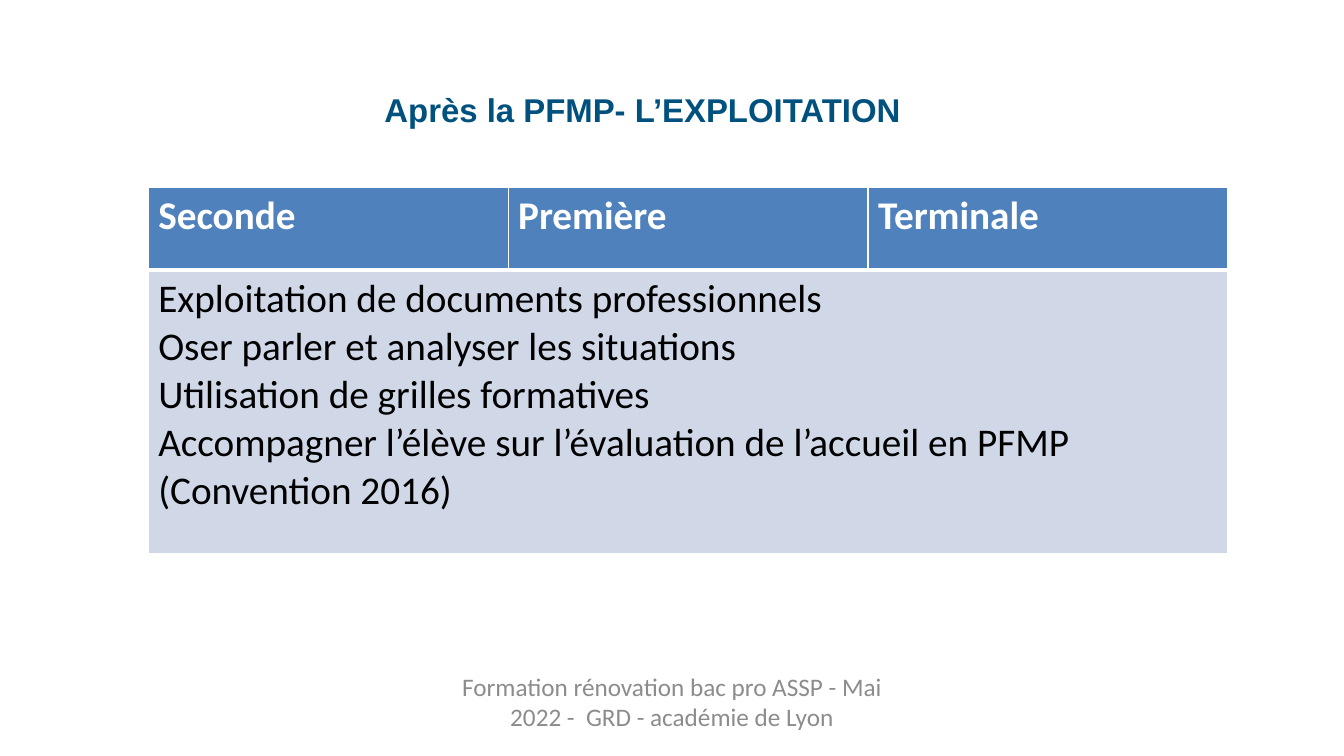
from lxml import etree
from pptx import Presentation
from pptx.dml.color import RGBColor
from pptx.enum import text
from pptx.oxml import ns
from pptx.util import Inches, Pt

HEADERS = ["Seconde", "Première", "Terminale"]
ACTIVITIES = [
    "Exploitation de documents professionnels",
    "Oser parler et analyser les situations",
    "Utilisation de grilles formatives",
    "Accompagner l’élève sur l’évaluation de l’accueil en PFMP (Convention 2016)",
]


def rgb(value):
    return RGBColor.from_string(value)


class SlideBuilder:
    blue, pale, navy, grey = "4F81BD", "D0D8E8", "00517D", "8C8C8C"
    white, black = "FFFFFF", "000000"

    def __init__(self, prs):
        self.s = prs.slides.add_slide(prs.slide_layouts[5])

    def set_text(self, tf, lines, size, color, font="Calibri", bold=False, align=None):
        tf.text = "\n".join(lines)
        for p in tf.paragraphs:
            p.alignment = align
            for r in p.runs:
                r.font.name, r.font.size, r.font.bold = font, Pt(size), bold
                r.font.color.rgb = rgb(color)

    def frame(self, sp, box, line, size, color, **style):
        """Place a shape and fill it with one centred text without margins."""
        sp.left, sp.top, sp.width, sp.height = map(Inches, box)
        tf = sp.text_frame
        tf.word_wrap = True
        tf.auto_size = text.MSO_AUTO_SIZE.NONE
        tf.vertical_anchor = text.MSO_ANCHOR.TOP
        tf.margin_left = tf.margin_top = tf.margin_right = tf.margin_bottom = 0
        self.set_text(tf, [line], size, color, align=text.PP_ALIGN.CENTER, **style)

    def title(self, box, line):
        self.frame(self.s.shapes.title, box, line, 23.5, self.navy,
                   font="Arial", bold=True)

    def footer(self, box, line):
        sp = self.s.shapes.add_textbox(*map(Inches, box))
        self.frame(sp, box, line, 18, self.grey)

    def borders(self, cell, **widths):
        """Draw white cell borders; widths are points keyed by L, R, T and B."""
        tcPr = cell._tc.get_or_add_tcPr()
        for i, (side, width) in enumerate(widths.items()):
            ln = etree.Element(ns.qn(f"a:ln{side}"), w=str(Pt(width)))
            fill = etree.SubElement(ln, ns.qn("a:solidFill"))
            etree.SubElement(fill, ns.qn("a:srgbClr"), val=self.white)
            tcPr.insert(i, ln)

    def table(self, box, row_heights, headers, lines):
        """Add a header row above one cell that spans all columns."""
        table = self.s.shapes.add_table(2, len(headers), *map(Inches, box)).table
        for row, height in zip(table.rows, row_heights):
            row.height = Inches(height)
        table.cell(1, 0).merge(table.cell(1, len(headers) - 1))
        for i, header in enumerate(headers):
            for row, color in enumerate((self.blue, self.pale)):
                cell = table.cell(row, i)
                cell.fill.solid()
                cell.fill.fore_color.rgb = rgb(color)
                self.borders(cell, L=1, R=1, T=1 if row == 0 else 3,
                             B=3 if row == 0 else 1)
            self.set_text(table.cell(0, i).text_frame, [header], 28, self.white,
                          bold=True)
        self.set_text(table.cell(1, 0).text_frame, lines, 28, self.black)


def main():
    prs = Presentation()
    prs.slide_width, prs.slide_height = Inches(13.33), Inches(7.5)
    slide = SlideBuilder(prs)
    slide.title((1, 0.89, 10.75, 0.4), "Après la PFMP- L’EXPLOITATION")
    slide.footer((4.53, 6.66, 4.27, 0.69),
                 "Formation rénovation bac pro ASSP - Mai 2022 -  GRD - académie de Lyon")
    slide.table((1.47, 1.86, 10.71, 3.62), (0.82, 2.81), HEADERS, ACTIVITIES)
    prs.save("out.pptx")


if __name__ == "__main__":
    main()
